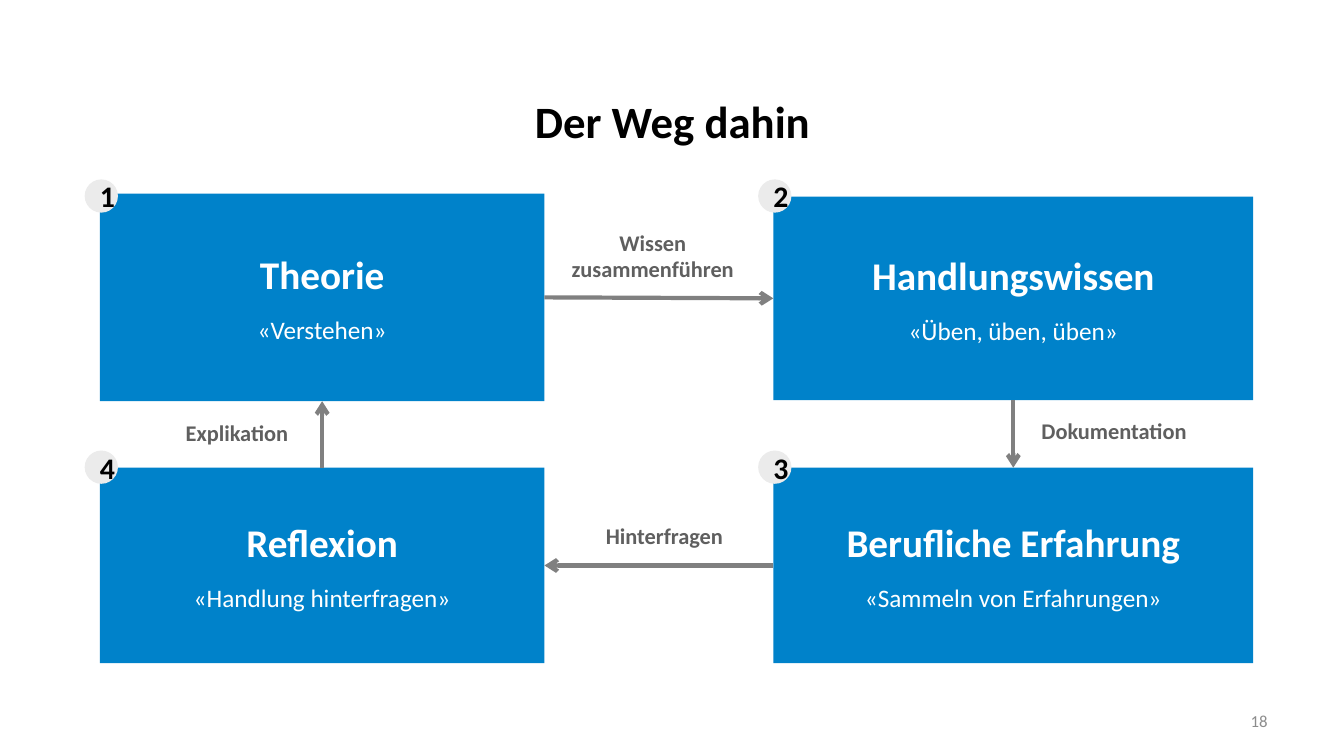
"""Build the slide "Der Weg dahin": a learning cycle of four numbered stations."""
from dataclasses import dataclass

from lxml.etree import SubElement
from pptx import Presentation
from pptx.dml.color import RGBColor
from pptx.enum.shapes import MSO_CONNECTOR, MSO_SHAPE
from pptx.enum.text import MSO_ANCHOR, PP_ALIGN
from pptx.oxml.ns import qn
from pptx.util import Inches, Pt


@dataclass(frozen=True)
class Theme:
    """Fonts, colours, type sizes and line width of the slide."""
    font: str = "Calibri"
    black: str = "000000"
    white: str = "FFFFFF"
    station: str = "0082CA"
    badge: str = "EBEBEB"
    arrow: str = "808080"
    label: str = "5F5F5F"
    number: str = "8C8C8C"
    title_size: float = 32
    heading_size: float = 28
    motto_size: float = 18
    label_size: float = 16
    badge_size: float = 21.3
    number_size: float = 12
    motto_gap: float = 12
    arrow_width: float = 3


THEME = Theme()
COLUMNS = {"left": (0.99, 4.41), "right": (7.67, 4.76)}
BADGE_ROWS = {"upper": 1.78, "lower": 4.47}
BADGE_SIZE = 0.33
BADGE_OVERHANG = 0.15
SITES = {"top": 0, "left": 1, "bottom": 2, "right": 3}

STATIONS = [
    ("1", "left", "upper", 1.92, 2.06, "Theorie", "«Verstehen»"),
    ("2", "right", "upper", 1.95, 2.02, "Handlungswissen", "«Üben, üben, üben»"),
    ("3", "right", "lower", 4.64, 1.94, "Berufliche Erfahrung", "«Sammeln von Erfahrungen»"),
    ("4", "left", "lower", 4.64, 1.94, "Reflexion", "«Handlung hinterfragen»"),
]
ARROWS = [
    ("1", "right", "2", "left"),
    ("2", "bottom", "3", "top"),
    ("3", "left", "4", "right"),
    ("4", "top", "1", "bottom"),
]
LABELS = [
    (["Wissen", "zusammenführen"], (5.41, 2.22, 2.13, 0.64)),
    (["Dokumentation"], (10.05, 4.09, 2, 0.37)),
    (["Hinterfragen"], (5.59, 5.13, 2, 0.37)),
    (["Explikation"], (1.49, 4.11, 1.72, 0.37)),
]


def apply(target, values):
    """Set each named attribute of the target."""
    for name, value in values.items():
        setattr(target, name, value)


def write(box, lines, align=PP_ALIGN.CENTER, **frame_values):
    """Fill a box with lines of (text, size, colour, bold, space before)."""
    frame = box.text_frame
    apply(frame, {"word_wrap": True, "vertical_anchor": MSO_ANCHOR.MIDDLE, **frame_values})
    for index, (text, size, colour, bold, gap) in enumerate(lines):
        para = frame.paragraphs[0] if index == 0 else frame.add_paragraph()
        apply(para, {"alignment": align, "space_before": Pt(gap)})
        span = para.add_run()
        span.text = text
        apply(span.font, {"name": THEME.font, "size": Pt(size), "bold": bold})
        span.font.color.rgb = RGBColor.from_string(colour)


def add_panel(page, preset, area, colour):
    """Add a flat filled shape without outline."""
    panel = page.shapes.add_shape(preset, *map(Inches, area))
    panel.shadow.inherit = False
    panel.fill.solid()
    panel.fill.fore_color.rgb = RGBColor.from_string(colour)
    panel.line.fill.background()
    return panel


def add_station(page, column, top, height, heading, motto):
    """Add a station with its heading and motto."""
    left, width = COLUMNS[column]
    station = add_panel(page, MSO_SHAPE.RECTANGLE, (left, top, width, height), THEME.station)
    write(station, [
        (heading, THEME.heading_size, THEME.white, True, 0),
        (motto, THEME.motto_size, THEME.white, False, THEME.motto_gap),
    ])
    return station


def add_badge(page, number, column, row):
    """Add a numbered circle on the corner of a station."""
    left = COLUMNS[column][0] - BADGE_OVERHANG
    area = (left, BADGE_ROWS[row], BADGE_SIZE, BADGE_SIZE)
    badge = add_panel(page, MSO_SHAPE.OVAL, area, THEME.badge)
    write(badge, [(number, THEME.badge_size, THEME.black, True, 0)],
          word_wrap=False, margin_left=Inches(0.12), margin_right=0)


def add_arrow(page, start, start_side, end, end_side):
    """Join two stations with an arrow."""
    arrow = page.shapes.add_connector(MSO_CONNECTOR.STRAIGHT, 0, 0, 0, 0)
    arrow.begin_connect(start, SITES[start_side])
    arrow.end_connect(end, SITES[end_side])
    arrow.line.color.rgb = RGBColor.from_string(THEME.arrow)
    arrow.line.width = Pt(THEME.arrow_width)
    SubElement(arrow.line._get_or_add_ln(), qn("a:tailEnd"), type="arrow")
    SubElement(arrow._element.spPr, qn("a:effectLst"))


def add_text(page, area, lines, **options):
    """Add a text box."""
    write(page.shapes.add_textbox(*map(Inches, area)), lines, **options)


def set_title(page, text):
    """Place and format the title placeholder."""
    title = page.shapes.title
    area = zip(("left", "top", "width", "height"), (0.67, 0.84, 12, 0.71))
    apply(title, {name: Inches(value) for name, value in area})
    write(title, [(text, THEME.title_size, THEME.black, True, 0)])


def main():
    """Build and save the deck."""
    deck = Presentation()
    apply(deck, {"slide_width": Inches(13.33), "slide_height": Inches(7.5)})
    page = deck.slides.add_slide(deck.slide_layouts.get_by_name("Title Only"))
    set_title(page, "Der Weg dahin")
    stations = {number: add_station(page, column, *content)
                for number, column, _, *content in STATIONS}
    for start, start_side, end, end_side in ARROWS:
        add_arrow(page, stations[start], start_side, stations[end], end_side)
    for texts, area in LABELS:
        lines = [(text, THEME.label_size, THEME.label, True, 0) for text in texts]
        add_text(page, area, lines, vertical_anchor=MSO_ANCHOR.TOP)
    for number, column, row, *_ in STATIONS:
        add_badge(page, number, column, row)
    add_text(page, (9.56, 6.95, 3.11, 0.4),
             [("18", THEME.number_size, THEME.number, False, 0)], align=PP_ALIGN.RIGHT)
    deck.save("out.pptx")


if __name__ == "__main__":
    main()
